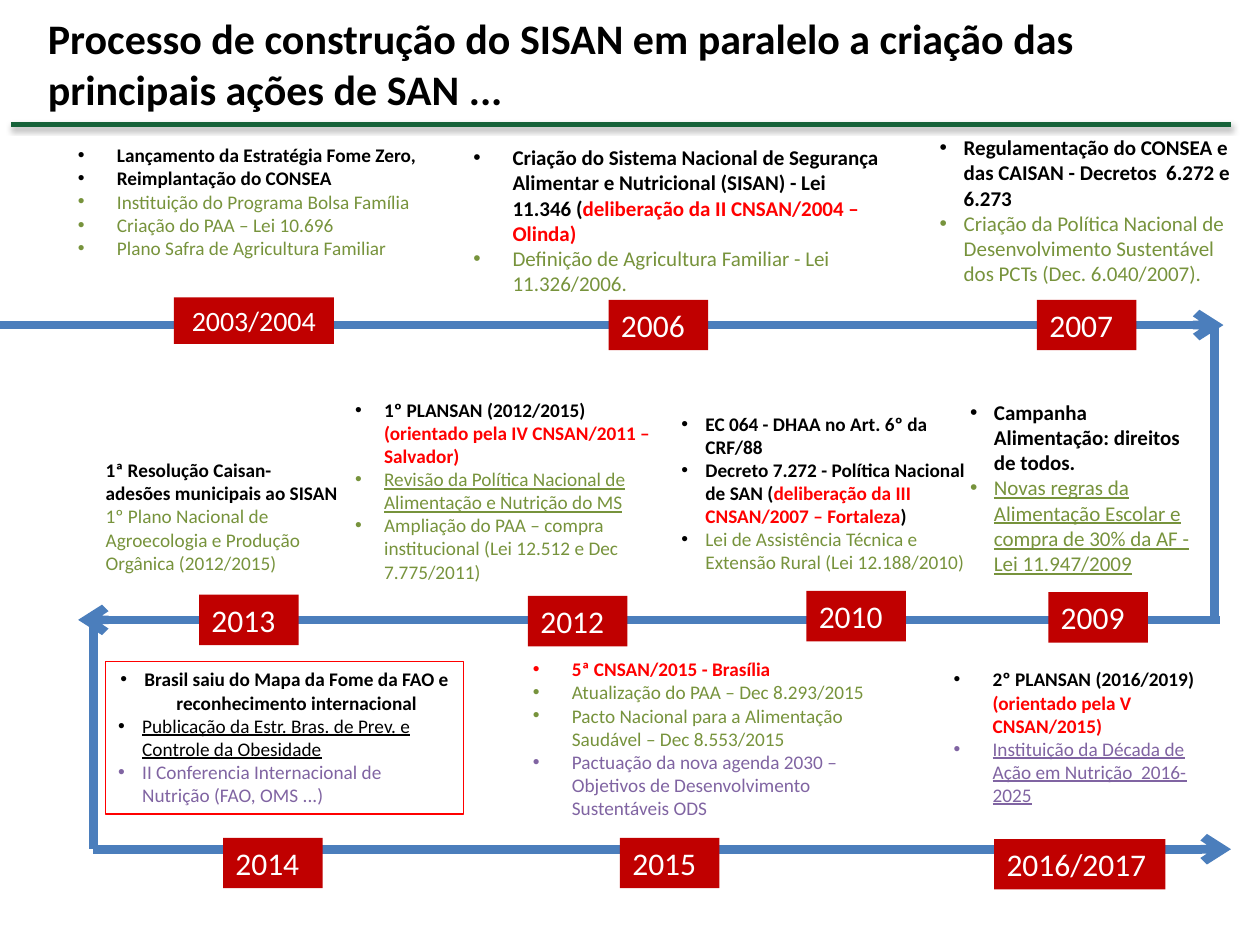
from lxml import etree
from pptx import Presentation
from pptx.dml.color import RGBColor
from pptx.enum.shapes import MSO_CONNECTOR, MSO_SHAPE
from pptx.enum.text import MSO_ANCHOR, MSO_AUTO_SIZE, PP_ALIGN
from pptx.oxml.ns import qn
from pptx.util import Inches, Pt

STRAIGHT, RECTANGLE = MSO_CONNECTOR.STRAIGHT, MSO_SHAPE.RECTANGLE
LEFT, CENTER, TOP = PP_ALIGN.LEFT, PP_ALIGN.CENTER, MSO_ANCHOR.TOP
COLORS = {"black": "000000", "white": "FFFFFF", "red": "FF0000", "green": "77933C",
          "purple": "8064A2", "year": "C00000", "timeline": "4B7EBC", "rule": "166239"}
FONT = "Calibri"


def color(name):
    return RGBColor.from_string(COLORS[name])


def add_line(start, end, name, width):
    line = page.shapes.add_connector(STRAIGHT, *map(Inches, start + end))
    line.line.color.rgb = color(name)
    line.line.width = Pt(width)
    effects = etree.SubElement(line._element.spPr, qn("a:effectLst"))
    return line, effects


deck = Presentation()
deck.slide_width, deck.slide_height = Inches(10), Inches(7.5)
page = deck.slides.add_slide(deck.slide_layouts[5])

# Title
title = page.shapes.title
title.left, title.top, title.width, title.height = map(Inches, (0.28, 0.05, 9.34, 0.91))
title.text_frame.text = ("Processo de construção do SISAN em paralelo a criação das "
                         "principais ações de SAN ...")
title.text_frame.auto_size = MSO_AUTO_SIZE.NONE
title.text_frame.vertical_anchor = TOP
heading = title.text_frame.paragraphs[0]
heading.alignment = LEFT
heading.font.name, heading.font.size, heading.font.bold = FONT, Pt(24), True
heading.font.color.rgb = color("black")

# Timeline: start, end, arrowhead at the end
timeline = [
    ((9.64, 2.58), (9.64, 4.92), False),
    ((0.74, 4.92), (0.74, 6.74), False),
    ((0.74, 6.74), (9.77, 6.74), True),
    ((9.68, 4.92), (0.62, 4.92), True),
    ((-0.12, 2.58), (9.71, 2.58), True),
]
for start, end, arrow in timeline:
    line, _ = add_line(start, end, "timeline", 5)
    if arrow:
        etree.SubElement(line.line._get_or_add_ln(), qn("a:tailEnd"), type="arrow")

# Year labels: text, left, top, width, height, size, alignment
years = [("2003/2004", 1.38, 2.36, 1.27, 0.37, 16, CENTER),
         ("2016/2017", 7.89, 6.66, 1.36, 0.4, 18, LEFT)]
years += [(year, left, top, 0.79, 0.4, 18, LEFT) for year, left, top in [
    ("2006", 4.83, 2.38), ("2007", 8.23, 2.38), ("2009", 8.32, 4.7),
    ("2010", 6.4, 4.69), ("2012", 4.19, 4.73), ("2013", 1.58, 4.72),
    ("2014", 1.77, 6.65), ("2015", 4.92, 6.65)]]
for year, left, top, width, height, size, alignment in years:
    label = page.shapes.add_shape(RECTANGLE, *map(Inches, (left, top, width, height)))
    label.shadow.inherit = False
    label.fill.solid()
    label.fill.fore_color.rgb = color("year")
    label.line.fill.background()
    label.text_frame.text = year
    label.text_frame.vertical_anchor = TOP
    para = label.text_frame.paragraphs[0]
    para.alignment = alignment
    para.font.name, para.font.size = FONT, Pt(size)
    para.font.color.rgb = color("white")

# Events: (left, top, width, height), size, indent, paragraphs of (text, colour, style)
# Style: b bold, u underlined
events = [
    ((0.52, 1.09, 3.4, 1.21), 11, 0.31, [
        [("Lançamento da Estratégia Fome Zero,", "black", "b")],
        [("Reimplantação do CONSEA", "black", "b")],
        [("Instituição do Programa Bolsa Família", "green", "")],
        [("Criação do PAA – Lei 10.696", "green", "")],
        [("Plano Safra de Agricultura Familiar", "green", "")]]),
    ((3.66, 1.1, 3.46, 1.31), 12, 0.31, [
        [("Criação do Sistema Nacional de Segurança Alimentar e Nutricional (SISAN) - "
          "Lei 11.346 (", "black", "b"),
         ("deliberação da II CNSAN/2004 – Olinda)", "red", "b")],
        [("Definição de Agricultura Familiar - Lei 11.326/2006.", "green", "")]]),
    ((7.36, 1.02, 2.52, 1.31), 12, 0.19, [
        [("Regulamentação do CONSEA e das CAISAN - Decretos  6.272 e 6.273", "black", "b")],
        [("Criação da Política Nacional de Desenvolvimento Sustentável dos PCTs "
          "(Dec. 6.040/2007).", "green", "")]]),
    ((7.6, 3.12, 1.95, 1.51), 12, 0.19, [
        [("Campanha Alimentação: direitos de todos.", "black", "b")],
        [("Novas regras da Alimentação Escolar e compra de 30% da AF - Lei 11.947/2009",
          "green", "u")]]),
    ((5.31, 3.22, 2.52, 1.4), 11, 0.19, [
        [("EC 064 - DHAA no Art. 6º da CRF/88", "black", "b")],
        [("Decreto 7.272 - Política Nacional de SAN (", "black", "b"),
         ("deliberação da III CNSAN/2007 – Fortaleza", "red", "b"), (")", "black", "b")],
        [("Lei de Assistência Técnica e Extensão Rural (Lei 12.188/2010)", "green", "")]]),
    ((2.72, 3.11, 2.55, 1.58), 11, 0.23, [
        [("1º PLANSAN (2012/2015) ", "black", "b"),
         ("(orientado pela IV CNSAN/2011 – Salvador)", "red", "b")],
        [("Revisão da Política Nacional de Alimentação e Nutrição do MS", "green", "u")],
        [("Ampliação do PAA – compra institucional (Lei 12.512 e Dec 7.775/2011)",
          "green", "")]]),
    ((0.74, 3.59, 2.06, 1.03), 11, 0, [
        [("1ª Resolução Caisan- adesões municipais ao SISAN", "black", "b")],
        [("1º Plano Nacional de Agroecologia e Produção Orgânica (2012/2015)",
          "green", "")]]),
    ((0.84, 5.25, 2.84, 1.21), 11, 0.19, [
        [("Brasil saiu do Mapa da Fome da FAO e reconhecimento internacional", "black", "b")],
        [("Publicação da Estr. Bras. de Prev. e Controle da Obesidade", "black", "u")],
        [("II Conferencia Internacional de Nutrição (FAO, OMS ...)", "purple", "")]]),
    ((4.13, 5.17, 3.15, 1.4), 11, 0.31, [
        [("5ª CNSAN/2015 - Brasília", "red", "b")],
        [("Atualização do PAA – Dec 8.293/2015", "green", "")],
        [("Pacto Nacional para a Alimentação Saudável – Dec 8.553/2015", "green", "")],
        [("Pactuação da nova agenda 2030 – Objetivos de Desenvolvimento Sustentáveis ODS",
          "purple", "")]]),
    ((7.47, 5.25, 2.33, 1.4), 11, 0.31, [
        [("2º PLANSAN (2016/2019) ", "black", "b"),
         ("(orientado pela V CNSAN/2015)", "red", "b")],
        [("Instituição da Década de Ação em Nutrição  2016-2025", "purple", "u")]]),
]
boxes = []
for place, size, indent, paragraphs in events:
    box = page.shapes.add_textbox(*map(Inches, place))
    boxes.append(box)
    frame = box.text_frame
    frame.word_wrap = True
    for number, spans in enumerate(paragraphs):
        para = frame.add_paragraph() if number else frame.paragraphs[0]
        if indent:
            properties = para._p.get_or_add_pPr()
            properties.set("marL", str(Inches(indent)))
            properties.set("indent", str(-Inches(indent)))
            if place[:2] == (5.31, 3.22):  # the 2010 list keeps black bullets
                bullet_color = etree.SubElement(properties, qn("a:buClr"))
                etree.SubElement(bullet_color, qn("a:srgbClr"), val=COLORS["black"])
            etree.SubElement(properties, qn("a:buFont"), typeface="Arial")
            etree.SubElement(properties, qn("a:buChar"), char="•")
        for text, name, style in spans:
            span = para.add_run()
            span.text = text
            span.font.name, span.font.size = FONT, Pt(size)
            span.font.bold, span.font.underline = "b" in style, "u" in style
            span.font.color.rgb = color(name)

# Red frame around the 2014 events
framed = boxes[7]
framed.line.color.rgb = color("red")
framed.line.width = Pt(0.75)
framed.text_frame.paragraphs[0].alignment = CENTER

# Green rule with a soft shadow under the title
_, effects = add_line((0.09, 0.99), (9.77, 0.99), "rule", 3)
shadow = etree.SubElement(effects, qn("a:outerShdw"), blurRad=str(Pt(3.1)),
                          dist=str(Pt(1.8)), dir="5400000", rotWithShape="0")
tint = etree.SubElement(shadow, qn("a:srgbClr"), val=COLORS["black"])
etree.SubElement(tint, qn("a:alpha"), val="35000")

deck.save("out.pptx")
